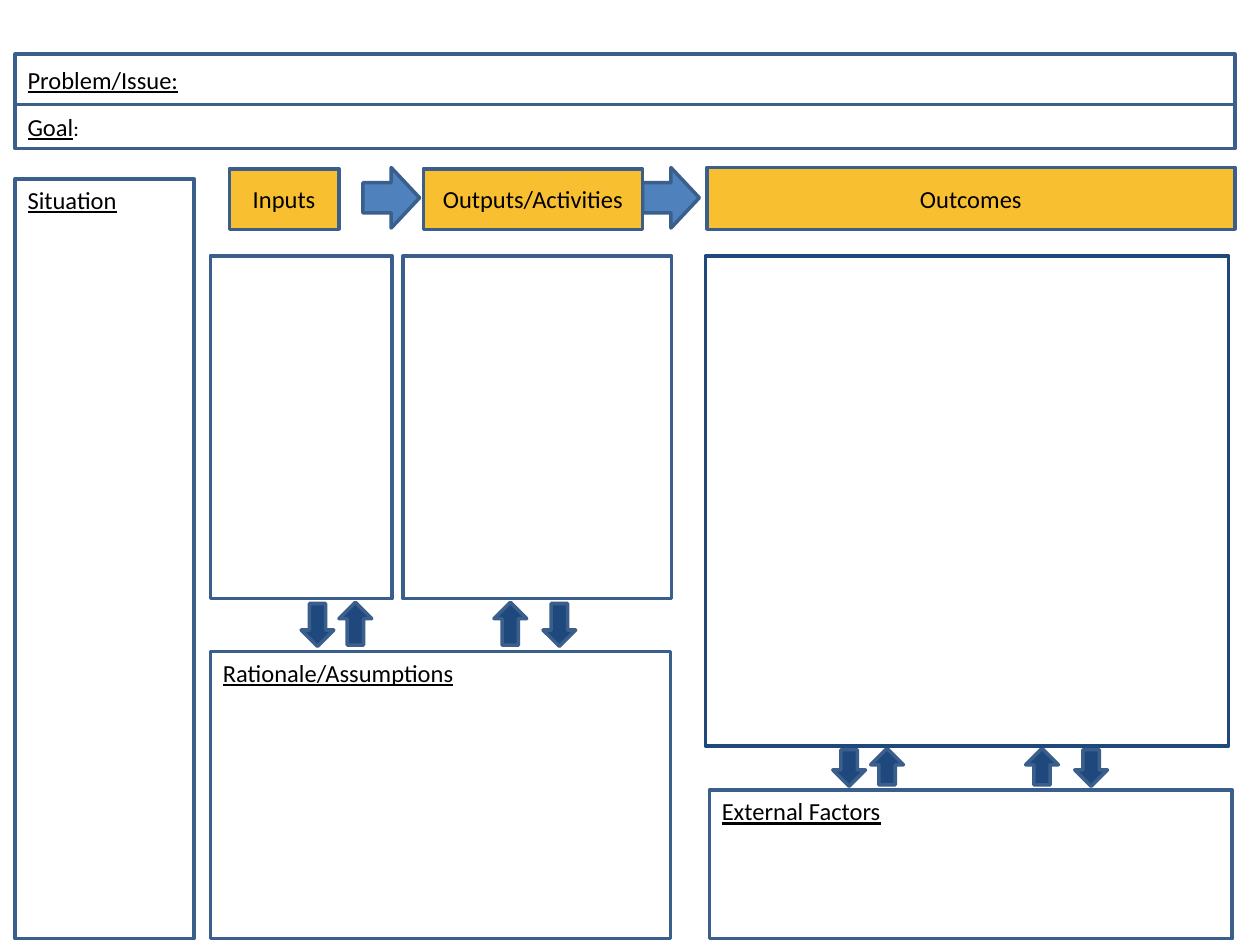
from pptx import Presentation
from pptx.dml.color import RGBColor
from pptx.enum.shapes import MSO_SHAPE as Shape
from pptx.enum.text import MSO_ANCHOR as Anchor, PP_ALIGN as Align
from pptx.util import Inches, Pt

COLORS = {
    "outline": "3A5F8C",
    "navy": "1F497D",
    "blue": "4F81BD",
    "gold": "F8BF30",
    "white": "FFFFFF",
    "black": "000000",
}
FONT = "Calibri"


def color(name):
    return RGBColor.from_string(COLORS[name])


def add_shape(page, kind, left, top, width, height, fill=None, line="outline"):
    shape = page.shapes.add_shape(
        kind, Inches(left), Inches(top), Inches(width), Inches(height))
    shape.shadow.inherit = False
    if fill:
        shape.fill.solid()
        shape.fill.fore_color.rgb = color(fill)
    else:
        shape.fill.background()
    shape.line.color.rgb = color(line)
    shape.line.width = Pt(2)
    return shape


def set_text(box, text, suffix="", underline=False, align=Align.LEFT, anchor=Anchor.TOP):
    """Write text at 14 pt, with an optional plain 12 pt suffix."""
    frame = box.text_frame
    frame.word_wrap = True
    frame.vertical_anchor = anchor
    para = frame.paragraphs[0]
    para.alignment = align
    for words, size, underlined in ((text, 14, underline), (suffix, 12, False)):
        if words:
            span = para.add_run()
            span.text = words
            span.font.name = FONT
            span.font.size = Pt(size)
            span.font.underline = underlined
            span.font.color.rgb = color("black")


def add_section(page, text, *place, **text_format):
    box = add_shape(page, Shape.RECTANGLE, *place)
    set_text(box, text, underline=True, **text_format)


def add_heading(page, text, *place):
    box = add_shape(page, Shape.RECTANGLE, *place, fill="gold")
    set_text(box, text, align=Align.CENTER, anchor=Anchor.MIDDLE)


def add_exchange_arrows(page, left, top, height):
    """Add two pairs of opposite arrows between a panel and the box below it."""
    for offset, drop, rotation in ((0, 0.01, 0), (1.92, 0.01, 0),
                                   (1.53, 0, 180), (0.3, 0, 180)):
        arrow = add_shape(page, Shape.DOWN_ARROW, left + offset, top + drop,
                          0.26, height, fill="navy")
        arrow.rotation = rotation


def main():
    deck = Presentation()
    deck.slide_width, deck.slide_height = Inches(10), Inches(7.5)
    page = deck.slides.add_slide(deck.slide_layouts[6])

    add_section(page, "Situation", 0.12, 1.42, 1.42, 6.03)
    add_section(page, "Problem/Issue:", 0.12, 0.43, 9.68, 0.4, anchor=Anchor.MIDDLE)
    add_section(page, "Goal", 0.12, 0.83, 9.68, 0.35, suffix=":", anchor=Anchor.MIDDLE)

    for left in (2.88, 5.1):
        add_shape(page, Shape.RIGHT_ARROW, left, 1.33, 0.45, 0.48, fill="blue")
    add_heading(page, "Inputs", 1.82, 1.34, 0.87, 0.48)
    add_heading(page, "Outputs/Activities", 3.36, 1.34, 1.74, 0.48)
    add_heading(page, "Outcomes", 5.61, 1.33, 4.19, 0.49)

    for left, width in ((1.67, 1.44), (3.2, 2.13)):
        add_shape(page, Shape.RECTANGLE, left, 2.03, width, 2.72, fill="white")

    add_section(page, "Rationale/Assumptions", 1.67, 5.17, 3.65, 2.28)
    add_exchange_arrows(page, 2.39, 4.78, 0.34)
    add_section(page, "External Factors", 5.63, 6.27, 4.15, 1.18)
    add_exchange_arrows(page, 6.61, 5.94, 0.29)
    add_shape(page, Shape.RECTANGLE, 5.6, 2.03, 4.15, 3.89, line="navy")

    deck.save("out.pptx")


if __name__ == "__main__":
    main()
